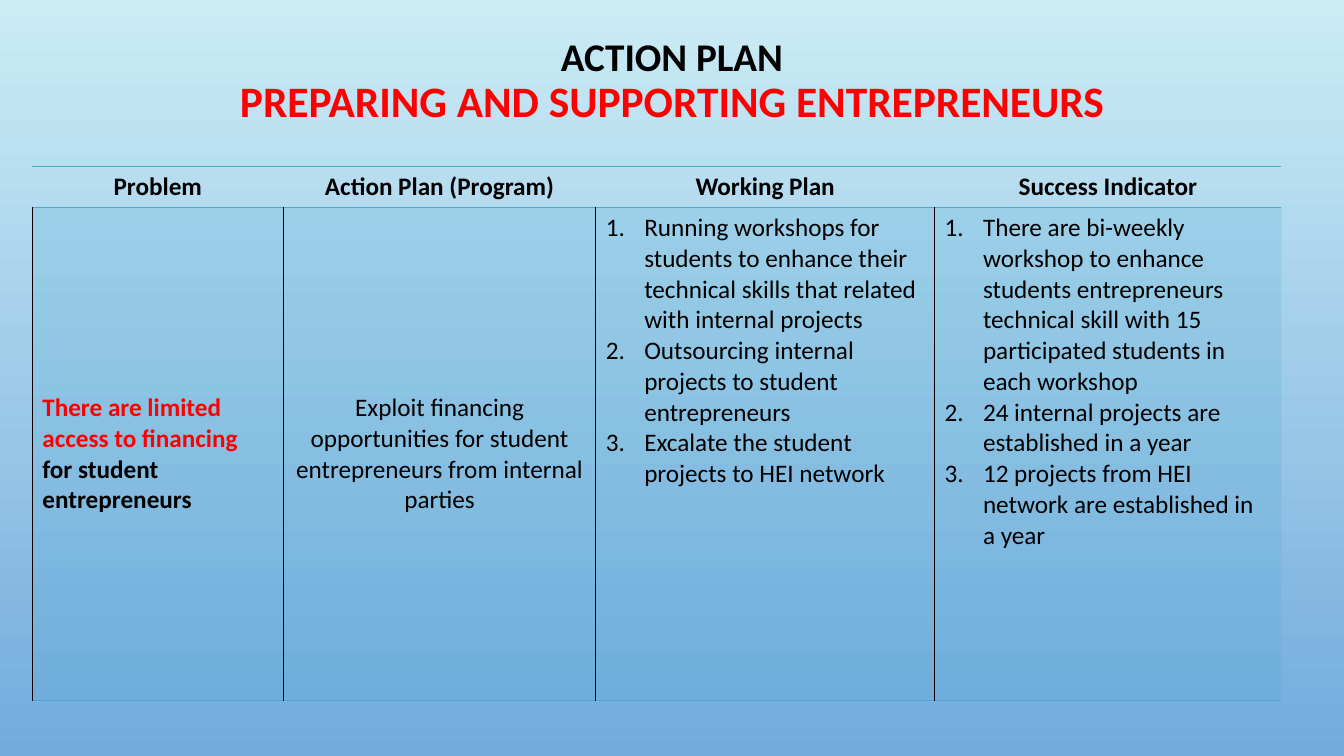
from dataclasses import dataclass

from lxml.etree import SubElement
from pptx import Presentation
from pptx.dml.color import RGBColor
from pptx.enum.text import MSO_ANCHOR as Anchor, MSO_AUTO_SIZE as AutoSize, PP_ALIGN as Align
from pptx.oxml.ns import qn
from pptx.util import Inches, Pt


@dataclass(frozen=True)
class Theme:
    """Colours, font and type sizes of the slide."""
    sky: str = "CBECF5"
    dusk: str = "73ABDD"
    accent: str = "48A8D0"
    ink: str = "000000"
    highlight: str = "FF0000"
    font: str = "Calibri"
    title_size: int = 28
    subtitle_size: int = 31
    table_size: int = 18
    tint_percent: int = 20
    plain_table_style: str = "{2D5ABB26-0587-4C30-8999-92F81FD0307C}"


THEME = Theme()
COLUMN_WIDTHS = [2.49, 3.1, 3.36, 3.44]
HEADER_HEIGHT = 0.41
HEADERS = ["Problem", "Action Plan (Program)", "Working Plan", "Success Indicator"]
PROBLEM = [("There are limited access to financing ", THEME.highlight),
           ("for student entrepreneurs", THEME.ink)]
PROGRAM = "Exploit financing opportunities for student entrepreneurs from internal parties"
WORKING_PLAN = [
    "Running workshops for students to enhance their technical skills that related with internal projects",
    "Outsourcing internal projects to student entrepreneurs",
    "Excalate the student projects to HEI network",
]
SUCCESS_INDICATORS = [
    "There are bi-weekly workshop to enhance students entrepreneurs technical skill "
    "with 15 participated students in each workshop",
    "24 internal projects are established in a year",
    "12 projects from HEI network are established in a year",
]


def style_font(font, size, color=THEME.ink, bold=False):
    """Give a font the theme face with a size, colour and weight."""
    font.name = THEME.font
    font.size = Pt(size)
    font.bold = bold
    font.color.rgb = RGBColor.from_string(color)


def paint_background(slide):
    """Fill the background with a gradient from top to bottom."""
    fill = slide.background.fill
    fill.gradient()
    fill.gradient_angle = 270
    for stop, position, color in zip(fill.gradient_stops, (0, 1), (THEME.sky, THEME.dusk)):
        stop.position = position
        stop.color.rgb = RGBColor.from_string(color)


def add_title(slide, left, top, width, height):
    """Write the two-line title in the title placeholder."""
    title = slide.shapes.title
    title.left, title.top, title.width, title.height = map(Inches, (left, top, width, height))
    frame = title.text_frame
    frame.auto_size = AutoSize.NONE
    frame.word_wrap = True
    frame.vertical_anchor = Anchor.MIDDLE
    paragraph = frame.paragraphs[0]
    paragraph.alignment = Align.CENTER
    paragraph.line_spacing = 0.9
    heading = paragraph.add_run()
    heading.text = "ACTION PLAN"
    style_font(heading.font, THEME.title_size, bold=True)
    paragraph.add_line_break()
    SubElement(paragraph._p[-1], qn("a:rPr"), sz=str(THEME.title_size * 100))
    topic = paragraph.add_run()
    topic.text = "PREPARING AND SUPPORTING ENTREPRENEURS"
    style_font(topic.font, THEME.subtitle_size, THEME.highlight, True)


def set_borders(cell, borders):
    """Draw one-point borders, given as side letters and colours in L, R, T, B order."""
    properties = cell._tc.get_or_add_tcPr()
    for index, (side, color) in enumerate(borders.items()):
        line = SubElement(properties, qn(f"a:ln{side}"), w=str(Pt(1)))
        solid = SubElement(line, qn("a:solidFill"))
        SubElement(solid, qn("a:srgbClr"), val=color)
        properties.insert(index, line)


def tint_cell(cell):
    """Fill a cell with the translucent accent colour."""
    cell.fill.solid()
    cell.fill.fore_color.rgb = RGBColor.from_string(THEME.accent)
    color = next(cell._tc.tcPr.iter(qn("a:srgbClr")))
    SubElement(color, qn("a:alpha"), val=str(THEME.tint_percent * 1000))


def write_centred(cell, text, bold=False):
    """Write one centred paragraph in a cell."""
    paragraph = cell.text_frame.paragraphs[0]
    paragraph.text = text
    paragraph.alignment = Align.CENTER
    style_font(paragraph.font, THEME.table_size, bold=bold)


def write_numbered(cell, items):
    """Write a numbered list in a cell."""
    frame = cell.text_frame
    frame.text = "\n".join(items)
    for paragraph in frame.paragraphs:
        properties = paragraph._p.get_or_add_pPr()
        properties.set("marL", str(Inches(0.38)))
        properties.set("indent", str(Inches(-0.38)))
        SubElement(properties, qn("a:buAutoNum"), type="arabicPeriod")
        style_font(paragraph.font, THEME.table_size)


def write_problem(cell):
    """Write the problem statement with its highlighted opening."""
    paragraph = cell.text_frame.paragraphs[0]
    for text, color in PROBLEM:
        run = paragraph.add_run()
        run.text = text
        style_font(run.font, THEME.table_size, color, True)


def add_plan_table(slide, left, top, width, height):
    """Build the action plan table in the given box."""
    frame = slide.shapes.add_table(2, len(HEADERS), *map(Inches, (left, top, width, height)))
    table = frame.table
    table.first_row = table.horz_banding = False
    next(table._tbl.iter(qn("a:tableStyleId"))).text = THEME.plain_table_style
    for column, column_width in zip(table.columns, COLUMN_WIDTHS):
        column.width = Inches(column_width)
    for row, row_height in zip(table.rows, (HEADER_HEIGHT, height - HEADER_HEIGHT)):
        row.height = Inches(row_height)

    last = len(HEADERS) - 1
    for index, header in enumerate(HEADERS):
        head, body = table.cell(0, index), table.cell(1, index)
        write_centred(head, header, bold=True)
        head.fill.background()
        set_borders(head, {"T": THEME.accent, "B": THEME.accent})
        tint_cell(body)
        sides = "L" if index == last else "LR"
        set_borders(body, dict.fromkeys(sides, THEME.ink) | dict.fromkeys("TB", THEME.accent))

    problem, program, working_plan, indicators = table.rows[1].cells
    problem.vertical_anchor = program.vertical_anchor = Anchor.MIDDLE
    write_problem(problem)
    write_centred(program, PROGRAM)
    write_numbered(working_plan, WORKING_PLAN)
    write_numbered(indicators, SUCCESS_INDICATORS)


def main():
    """Build and save the presentation."""
    presentation = Presentation()
    presentation.slide_width, presentation.slide_height = Inches(13.33), Inches(7.5)
    slide = presentation.slides.add_slide(presentation.slide_layouts[5])
    paint_background(slide)
    add_title(slide, 1, 0.31, 11.33, 1.02)
    add_plan_table(slide, 0.32, 1.65, sum(COLUMN_WIDTHS), 5.3)
    presentation.save("out.pptx")


if __name__ == "__main__":
    main()
